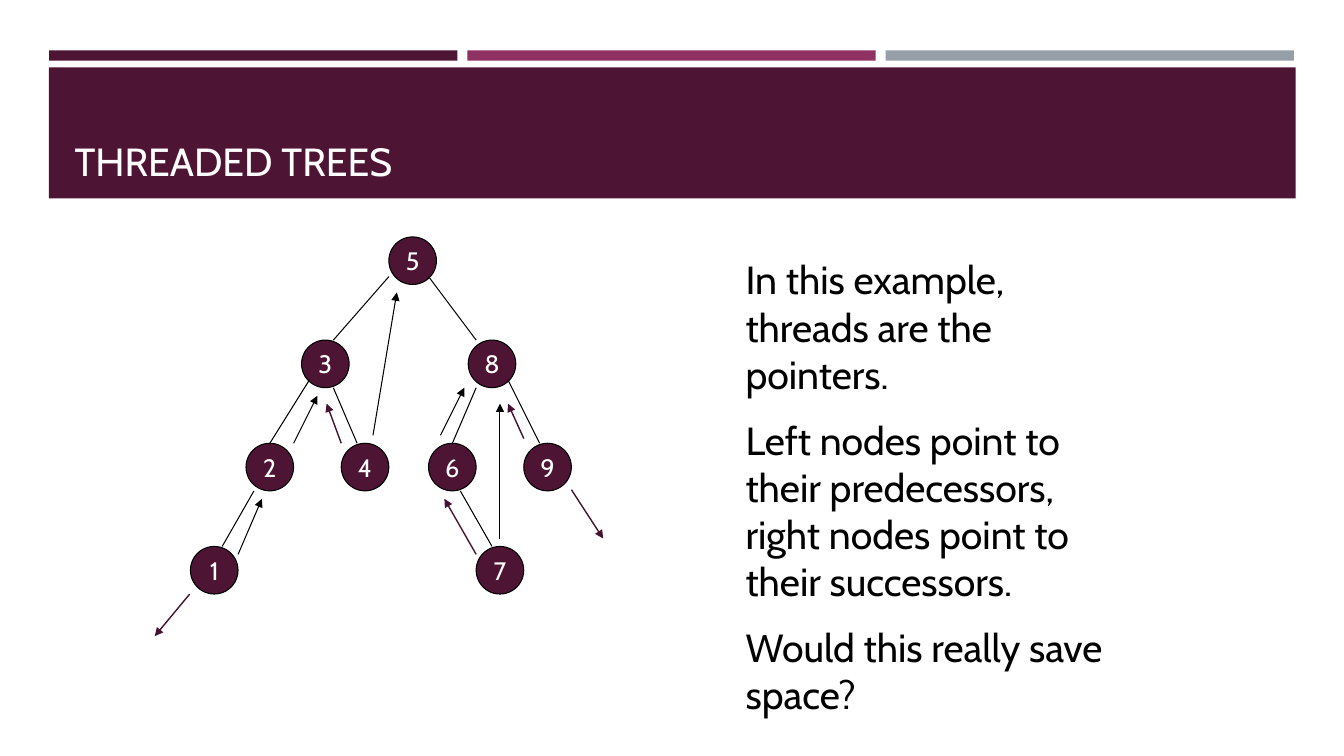
from dataclasses import dataclass

from lxml import etree
from pptx import Presentation
from pptx.dml.color import RGBColor
from pptx.enum.shapes import MSO_CONNECTOR, MSO_SHAPE
from pptx.enum.text import MSO_ANCHOR, PP_ALIGN
from pptx.oxml.ns import qn
from pptx.util import Cm, Pt

RECT = MSO_SHAPE.RECTANGLE
OVAL = MSO_SHAPE.OVAL
LINE = MSO_CONNECTOR.STRAIGHT
TOP, MIDDLE, BOTTOM = MSO_ANCHOR.TOP, MSO_ANCHOR.MIDDLE, MSO_ANCHOR.BOTTOM
CENTER = PP_ALIGN.CENTER


@dataclass(frozen=True)
class Theme:
    font: str = "Cabin"
    plum: str = "4D1434"
    berry: str = "903163"
    gray: str = "969FA7"
    wine: str = "45122F"
    black: str = "000000"
    white: str = "FFFFFF"
    large: int = 28
    small: int = 18
    gap: float = 13.5
    thin: float = 0.75
    thick: float = 1


TREE_TOP = 5.97
NODE = 1.2
LEVEL = 2.6

NODES = [
    ("5", 9.8, 0), ("3", 7.6, 1), ("8", 11.8, 1),
    ("6", 10.8, 2), ("4", 8.6, 2), ("2", 6.2, 2), ("9", 13.2, 2),
    ("1", 4.8, 3), ("7", 12, 3),
]
EDGES = [
    (9.8, 1, 8.4, 2.6), (7.8, 3.6, 6.8, 5.2),
    (8.4, 3.8, 9, 5.2), (6.4, 6.4, 5.6, 7.8),
    (10.8, 1, 12, 2.6), (12, 3.8, 11.4, 5.2),
    (12.8, 3.6, 13.6, 5.2), (11.6, 6.4, 12.4, 7.8),
]
NEXT = [
    (6, 8, 6.6, 6.6), (7.4, 5.2, 8, 4), (9.4, 5, 10, 1.4),
    (11.1, 5, 11.7, 3.8), (12.6, 7.6, 12.6, 4.2),
]
PRIOR = [
    (8.6, 5.2, 8.23, 4.2), (12, 8, 11.2, 6.6), (13.2, 5.08, 12.8, 4.2),
    (14.4, 6.37, 15.2, 7.6), (4.78, 9, 3.9, 10.06),
]
NOTES = [
    "In this example, threads are the pointers.",
    "Left nodes point to their predecessors, right nodes point to their successors.",
    "Would this really save space?",
]


class Board:
    def __init__(self, slide, theme):
        self.shapes = slide.shapes
        self.theme = theme

    def color(self, name):
        return RGBColor.from_string(name)

    def style(self, para, size, color):
        para.font.name = self.theme.font
        para.font.size = Pt(size)
        para.font.color.rgb = self.color(color)

    def solid(self, kind, x, y, wide, high, fill):
        shape = self.shapes.add_shape(kind, Cm(x), Cm(y), Cm(wide), Cm(high))
        shape.shadow.inherit = False
        shape.fill.solid()
        shape.fill.fore_color.rgb = self.color(fill)
        shape.line.fill.background()
        return shape

    def node(self, label, x, level):
        theme = self.theme
        shape = self.solid(OVAL, x, TREE_TOP + LEVEL * level, NODE, NODE, theme.plum)
        shape.line.color.rgb = self.color(theme.black)
        shape.line.width = Pt(theme.thin)
        frame = shape.text_frame
        frame.word_wrap = False
        frame.vertical_anchor = MIDDLE
        para = frame.paragraphs[0]
        para.text = label
        para.alignment = CENTER
        self.style(para, theme.small, theme.white)

    def link(self, ends, color, width, arrow):
        x, y, to_x, to_y = ends
        line = self.shapes.add_connector(
            LINE, Cm(x), Cm(TREE_TOP + y), Cm(to_x), Cm(TREE_TOP + to_y))
        line.line.color.rgb = self.color(color)
        line.line.width = Pt(width)
        if arrow:
            etree.SubElement(line.line._get_or_add_ln(), qn("a:tailEnd"), type="triangle")
        etree.SubElement(line._element.spPr, qn("a:effectLst"))

    def text(self, x, y, wide, high, lines, color, anchor):
        box = self.shapes.add_textbox(Cm(x), Cm(y), Cm(wide), Cm(high))
        frame = box.text_frame
        frame.word_wrap = True
        frame.vertical_anchor = anchor
        for index, line in enumerate(lines):
            para = frame.add_paragraph() if index else frame.paragraphs[0]
            para.text = line
            if index:
                para.space_before = Pt(self.theme.gap)
            self.style(para, self.theme.large, color)


def main():
    deck = Presentation()
    deck.slide_width, deck.slide_height = Cm(33.87), Cm(19.05)
    theme = Theme()
    board = Board(deck.slides.add_slide(deck.slide_layouts[6]), theme)

    for index, fill in enumerate((theme.plum, theme.berry, theme.gray)):
        board.solid(RECT, 1.24 + 10.54 * index, 1.27, 10.29, 0.26, fill)
    board.solid(RECT, 1.23, 1.7, 31.42, 3.3, theme.plum)
    board.text(1.63, 1.96, 30.63, 2.82, ["THREADED TREES"], theme.white, BOTTOM)

    for node in NODES:
        board.node(*node)
    for ends in EDGES:
        board.link(ends, theme.black, theme.thin, False)
    for ends in NEXT:
        board.link(ends, theme.black, theme.thin, True)
    board.text(18.54, 6.32, 10.01, 11.02, NOTES, theme.black, TOP)
    for ends in PRIOR:
        board.link(ends, theme.wine, theme.thick, True)

    deck.save("out.pptx")


if __name__ == "__main__":
    main()
